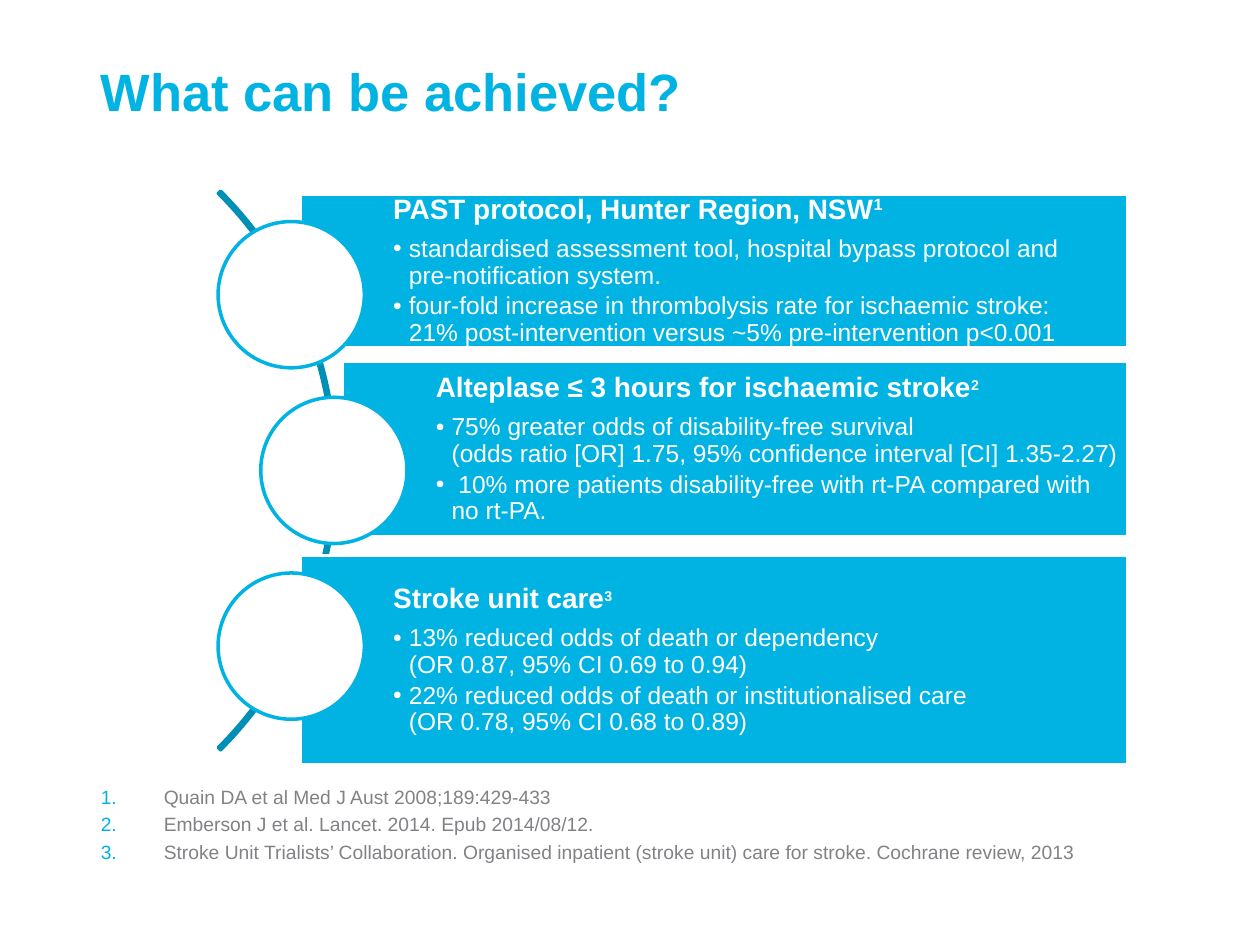
from lxml.etree import SubElement
from pptx import Presentation
from pptx.dml.color import RGBColor
from pptx.enum.shapes import MSO_SHAPE
from pptx.enum.text import MSO_ANCHOR, PP_ALIGN
from pptx.oxml.ns import qn
from pptx.util import Pt

COLORS = {"cyan": "00B3E2", "teal": "008FB5", "white": "FFFFFF", "grey": "818285"}

BANNERS = [
    {"left": 171.4, "top": 110.9, "height": 87.8, "circle": 124.6, "note_size": 16,
     "heading": "PAST protocol, Hunter Region, NSW",
     "points": ["standardised assessment tool, hospital bypass protocol and\v"
                "pre-notification system.",
                "four-fold increase in thrombolysis rate for ischaemic stroke:\v"
                "21% post-intervention versus ~5% pre-intervention p<0.001"]},
    {"left": 195.8, "top": 206.6, "height": 100.1, "circle": 149, "note_size": 14,
     "heading": "Alteplase ≤ 3 hours for ischaemic stroke",
     "points": ["75% greater odds of disability-free survival\v"
                "(odds ratio [OR] 1.75, 95% confidence interval [CI] 1.35-2.27)",
                " 10% more patients disability-free with rt-PA compared with no rt-PA."]},
    {"left": 171.4, "top": 317.5, "height": 119.5, "circle": 124.6, "note_size": 14,
     "heading": "Stroke unit care",
     "points": ["13% reduced odds of death or dependency\v(OR 0.87, 95% CI 0.69 to 0.94)",
                "22% reduced odds of death or institutionalised care\v"
                "(OR 0.78, 95% CI 0.68 to 0.89)"]},
]
REFERENCES = [
    "Quain DA et al Med J Aust 2008;189:429-433",
    "Emberson J et al. Lancet. 2014. Epub 2014/08/12.",
    "Stroke Unit Trialists’ Collaboration. Organised inpatient (stroke unit) care for stroke. "
    "Cochrane review, 2013",
]
BANNER_RIGHT = 644.4
CIRCLE_SIZE, CIRCLE_TOP, CIRCLE_STEP = 83.6, 126.6, 100.4


def add_outlined(kind, left, top, width, height, line, fill=None):
    shape = page.shapes.add_shape(kind, Pt(left), Pt(top), Pt(width), Pt(height))
    shape.shadow.inherit = False
    shape.line.color.rgb = RGBColor.from_string(COLORS[line])
    shape.line.width = Pt(2)
    if fill:
        shape.fill.solid()
        shape.fill.fore_color.rgb = RGBColor.from_string(COLORS[fill])
    else:
        shape.fill.background()
    return shape


def write(para, text, size, color, bold=False, bullet=None, indent=0):
    """Fill a paragraph; bullet is (tag, attributes) of the DrawingML bullet."""
    para.text = text
    para.alignment = PP_ALIGN.LEFT
    if bullet:
        props = para._p.get_or_add_pPr()
        props.set("marL", str(Pt(indent)))
        props.set("indent", str(-Pt(indent)))
        if bullet[0] == "a:buAutoNum":
            tint = SubElement(props, qn("a:buClr"))
            SubElement(tint, qn("a:srgbClr"), val=COLORS["cyan"])
        SubElement(props, qn("a:buFont"), typeface="Arial")
        SubElement(props, qn(bullet[0]), bullet[1])
    for line_break in para._p.findall(qn("a:br")):
        SubElement(line_break, qn("a:rPr"), sz=str(size * 100))
    for span in para.runs:
        span.font.name = "Arial"
        span.font.size = Pt(size)
        span.font.bold = bold
        span.font.color.rgb = RGBColor.from_string(COLORS[color])


deck = Presentation()
deck.slide_width, deck.slide_height = Pt(720), Pt(540)
page = deck.slides.add_slide(deck.slide_layouts[6])

# Title and references
frames = []
for top, height in [(33.8, 77.8), (448.6, 45.4)]:
    box = page.shapes.add_textbox(Pt(57.6), Pt(top), Pt(626.4), Pt(height))
    frame = box.text_frame
    frame.word_wrap = True
    frame.margin_left = frame.margin_top = frame.margin_right = frame.margin_bottom = 0
    frames.append(frame)
title, references = frames
write(title.paragraphs[0], "What can be achieved?", 30, "cyan", bold=True)
for index, reference in enumerate(REFERENCES):
    para = references.add_paragraph() if index else references.paragraphs[0]
    write(para, reference, 11, "grey", bullet=("a:buAutoNum", {"type": "arabicPeriod"}), indent=36)
    if index:
        para.space_before = Pt(2.5)

# Arc behind the banners
arc = add_outlined(MSO_SHAPE.BLOCK_ARC, -259.2, 43.2, 451.4, 451.4, "teal")
for index, value in enumerate([189, 27, 0.004]):
    arc.adjustments[index] = value

# Banners, each with its circle
for index, banner in enumerate(BANNERS):
    panel = add_outlined(MSO_SHAPE.RECTANGLE, banner["left"], banner["top"],
                         BANNER_RIGHT - banner["left"], banner["height"], "white", "cyan")
    frame = panel.text_frame
    frame.word_wrap = True
    frame.vertical_anchor = MSO_ANCHOR.MIDDLE
    frame.margin_left = Pt(53.3)
    frame.margin_top = frame.margin_right = frame.margin_bottom = Pt(2.9)

    heading = frame.paragraphs[0]
    write(heading, banner["heading"], 16, "white", bold=True)
    heading.line_spacing = 0.9
    heading.space_after = Pt(6.4)
    note = heading.add_run()
    note.text = str(index + 1)
    note.font.name = "Arial"
    note.font.size = Pt(banner["note_size"])
    note.font.bold = True
    note.font.color.rgb = RGBColor.from_string(COLORS["white"])
    note._r.get_or_add_rPr().set("baseline", "30000")

    for point in banner["points"]:
        para = frame.add_paragraph()
        write(para, point, 14, "white", bullet=("a:buChar", {"char": "•"}), indent=9)
        para.line_spacing = 0.9
        para.space_after = Pt(2.4)

    add_outlined(MSO_SHAPE.OVAL, banner["circle"], CIRCLE_TOP + index * CIRCLE_STEP,
                 CIRCLE_SIZE, CIRCLE_SIZE, "cyan", "white")

deck.save("out.pptx")
